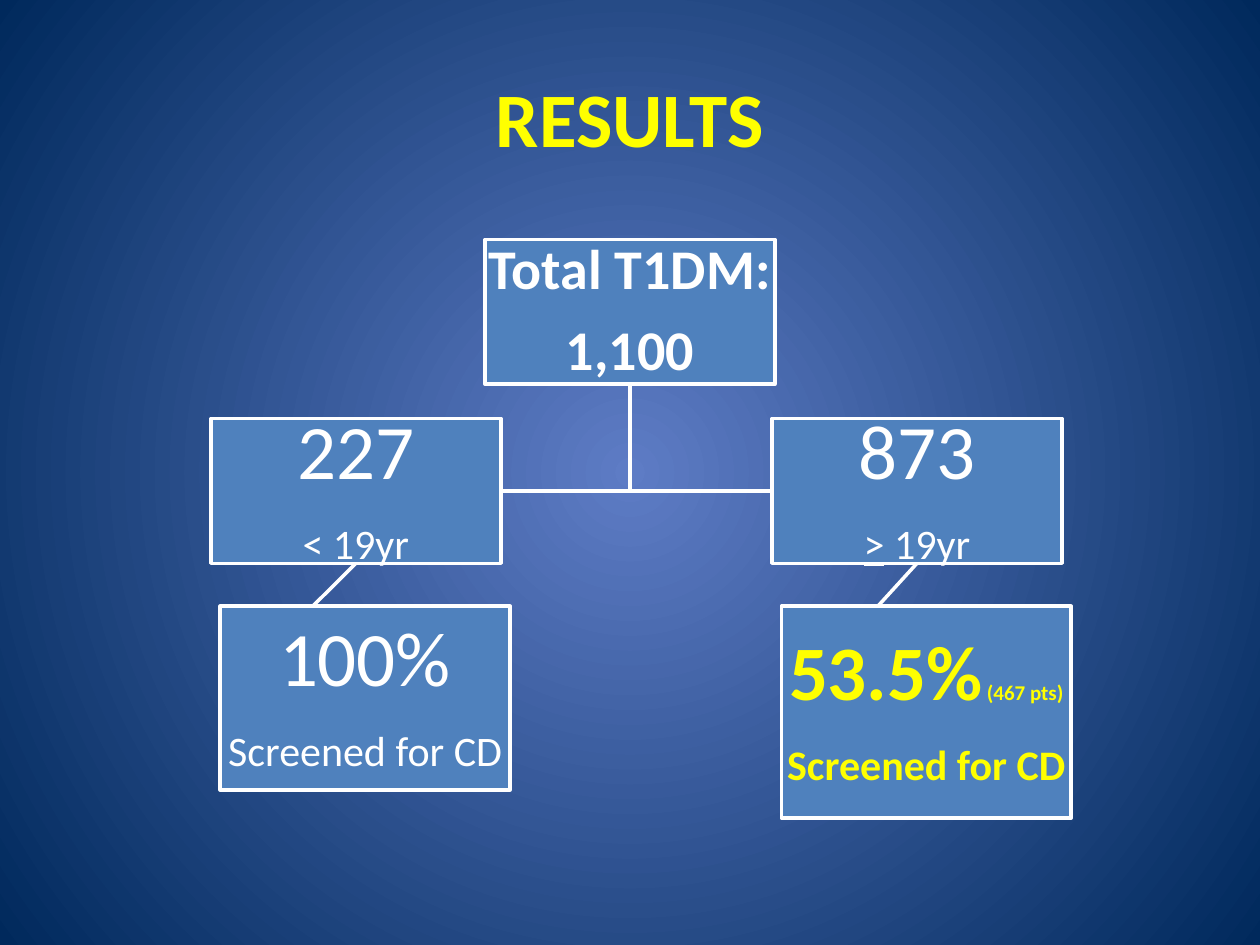
from dataclasses import dataclass

from lxml.etree import SubElement
from pptx import Presentation
from pptx.dml.color import RGBColor
from pptx.enum.shapes import MSO_CONNECTOR as Connector, MSO_SHAPE as Preset
from pptx.enum.text import MSO_ANCHOR as Anchor, PP_ALIGN as Align
from pptx.oxml.ns import qn
from pptx.shapes.autoshape import Shape
from pptx.shapes.connector import Connector as Line
from pptx.slide import Slide
from pptx.text.text import TextFrame
from pptx.util import Pt


@dataclass(frozen=True)
class Theme:
    font: str = "Calibri"
    white: RGBColor = RGBColor(0xFF, 0xFF, 0xFF)
    yellow: RGBColor = RGBColor(0xFF, 0xFF, 0x00)
    box_fill: RGBColor = RGBColor(0x4F, 0x81, 0xBD)
    glow: RGBColor = RGBColor(0x5E, 0x7C, 0xC5)
    edge: RGBColor = RGBColor(0x00, 0x29, 0x5C)
    large: float = 44
    heading: float = 32
    label: float = 24
    note: float = 12
    gap: float = 10
    line: float = 2
    line_spacing: float = 0.9
    space_after: float = 0.35


THEME = Theme()
SLIDE_WIDTH, SLIDE_HEIGHT = 720, 540
BOX_WIDTH, BOX_HEIGHT = 165.6, 82.8
TOTAL_LEFT, TOTAL_TOP = (SLIDE_WIDTH - BOX_WIDTH) / 2, 136.8
GROUP_TOP, SCREENED_TOP = 239.1, 346.4
YOUNG_LEFT, ADULT_LEFT = 120.6, 441.2
INDENT = 5.3
BOTTOM, LEFT, RIGHT = 2, 1, 3


@dataclass(frozen=True)
class Span:
    text: str
    size: float
    bold: bool = False
    underline: bool = False
    color: RGBColor = THEME.white


@dataclass(frozen=True)
class Node:
    left: float
    top: float
    paras: list[list[Span]]
    height: float = BOX_HEIGHT
    inset: float = 2.2


def paint_background(slide: Slide) -> None:
    fill = slide.background.fill
    fill.gradient()
    for stop, color, position in zip(fill.gradient_stops, (THEME.glow, THEME.edge), (0, 1)):
        stop.color.rgb = color
        stop.position = position
    gradient = slide.element.find(".//" + qn("a:gradFill"))
    gradient.remove(gradient.find(qn("a:lin")))
    circle = SubElement(gradient, qn("a:path"))
    circle.set("path", "circle")
    center = SubElement(circle, qn("a:fillToRect"))
    for side in "ltrb":
        center.set(side, "50000")


def write_paras(frame: TextFrame, paras: list[list[Span]]) -> None:
    frame.word_wrap = True
    frame.vertical_anchor = Anchor.MIDDLE
    for index, spans in enumerate(paras):
        para = frame.add_paragraph() if index else frame.paragraphs[0]
        para.alignment = Align.CENTER
        para.line_spacing = THEME.line_spacing
        para.space_after = Pt(THEME.space_after * max(span.size for span in spans))
        for span in spans:
            run = para.add_run()
            run.text = span.text
            run.font.name = THEME.font
            run.font.size = Pt(span.size)
            run.font.bold = span.bold
            run.font.underline = span.underline
            run.font.color.rgb = span.color


def add_title(slide: Slide, text: str) -> None:
    box = slide.shapes.add_textbox(Pt(36), Pt(21.6), Pt(648), Pt(90))
    write_paras(box.text_frame, [[Span(text, THEME.large, bold=True, color=THEME.yellow)]])
    para = box.text_frame.paragraphs[0]
    para.line_spacing = 1.0
    para.space_after = Pt(0)


def add_node(slide: Slide, node: Node) -> Shape:
    box = slide.shapes.add_shape(
        Preset.RECTANGLE, Pt(node.left), Pt(node.top), Pt(BOX_WIDTH), Pt(node.height)
    )
    box.shadow.inherit = False
    box.fill.solid()
    box.fill.fore_color.rgb = THEME.box_fill
    box.line.color.rgb = THEME.white
    box.line.width = Pt(THEME.line)
    frame = box.text_frame
    frame.margin_left = frame.margin_right = Pt(node.inset)
    frame.margin_top = frame.margin_bottom = Pt(node.inset)
    write_paras(frame, node.paras)
    return box


def add_line(slide: Slide, x: float = 0, y: float = 0) -> Line:
    line = slide.shapes.add_connector(Connector.STRAIGHT, Pt(x), Pt(y), Pt(x), Pt(y))
    line.line.color.rgb = THEME.white
    line.line.width = Pt(THEME.line)
    SubElement(line.element.spPr, qn("a:effectLst"))
    slide.shapes.element.insert(2, line.element)
    return line


def join(slide: Slide, start: Shape, start_side: int, end: Shape, end_side: int) -> None:
    line = add_line(slide)
    line.begin_connect(start, start_side)
    line.end_connect(end, end_side)


def main() -> None:
    deck = Presentation()
    deck.slide_width, deck.slide_height = Pt(SLIDE_WIDTH), Pt(SLIDE_HEIGHT)
    slide = deck.slides.add_slide(deck.slide_layouts[6])
    paint_background(slide)
    add_title(slide, "RESULTS")

    large, label = THEME.large, THEME.label
    strong = {"bold": True, "color": THEME.yellow}
    nodes = [
        Node(TOTAL_LEFT, TOTAL_TOP, [
            [Span("Total T1DM:", THEME.heading, bold=True)],
            [Span("1,100", THEME.heading, bold=True)],
        ], inset=1.6),
        Node(YOUNG_LEFT, GROUP_TOP, [[Span("227", large)], [Span("< 19yr", label)]]),
        Node(YOUNG_LEFT + INDENT, SCREENED_TOP, [
            [Span("100%", large)],
            [Span("Screened for CD", label)],
        ], height=105),
        Node(ADULT_LEFT, GROUP_TOP, [
            [Span("873", large)],
            [Span(">", label, underline=True), Span(" 19yr", label)],
        ]),
        Node(ADULT_LEFT + INDENT, SCREENED_TOP, [
            [
                Span("53.5%", large, **strong),
                Span(" ", THEME.gap, **strong),
                Span("(467 pts)", THEME.note, **strong),
            ],
            [Span("Screened for CD", label, **strong)],
        ], height=121),
    ]
    total, young, young_screened, adult, adult_screened = [add_node(slide, node) for node in nodes]

    stem = add_line(slide, SLIDE_WIDTH / 2, GROUP_TOP + BOX_HEIGHT / 2)
    stem.begin_connect(total, BOTTOM)
    join(slide, young, RIGHT, adult, LEFT)
    join(slide, young, BOTTOM, young_screened, LEFT)
    join(slide, adult, BOTTOM, adult_screened, LEFT)

    deck.save("out.pptx")


if __name__ == "__main__":
    main()
